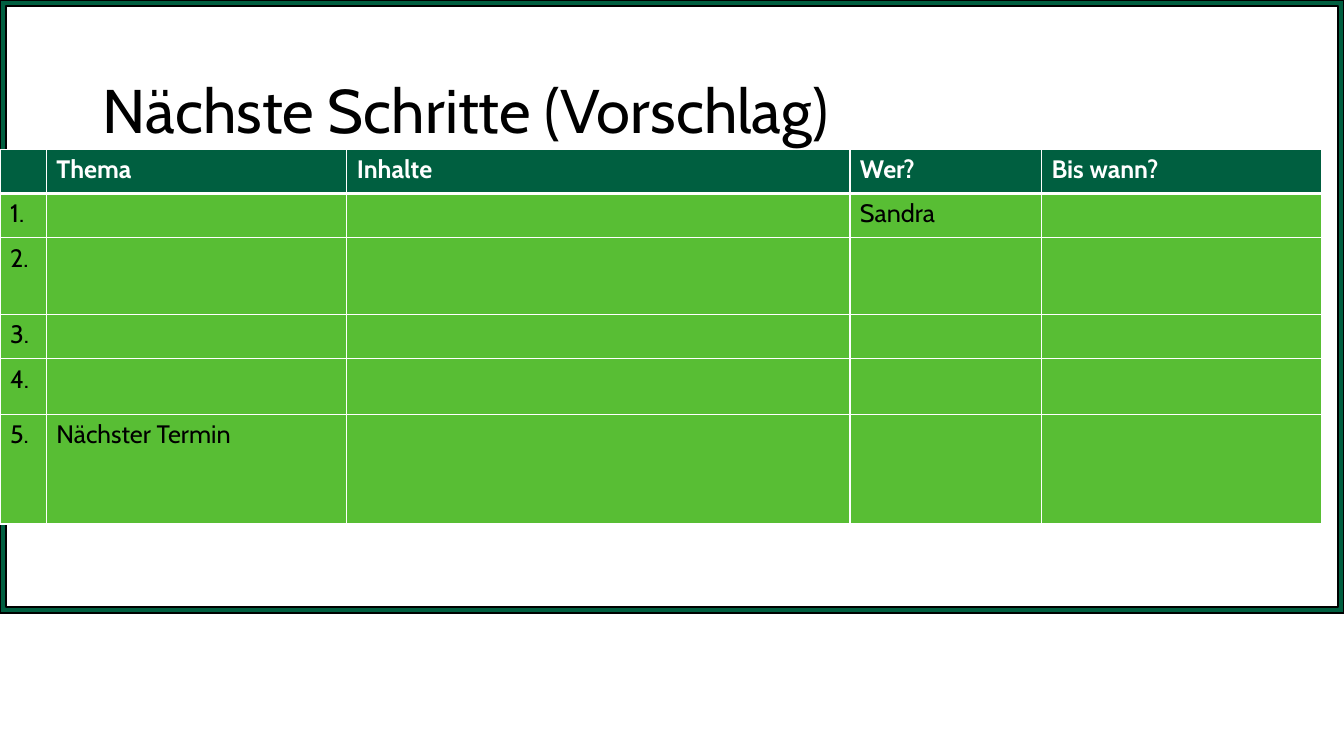
import pptx
import pptx.dml.color
import pptx.enum.shapes
import pptx.enum.text
import pptx.oxml
import pptx.oxml.ns
import pptx.util
from pptx.util import Inches

FONT = "Cabin"
DARK, GREEN, WHITE, BLACK = "005F40", "58BE34", "FFFFFF", "000000"


def color(code):
    return pptx.dml.color.RGBColor.from_string(code)


class Deck:
    """Holds the style and the current slide."""

    def __init__(self, wide, high):
        self.file = pptx.Presentation()
        self.file.slide_width = Inches(wide)
        self.file.slide_height = Inches(high)
        self.slide = self.file.slides.add_slide(self.file.slide_layouts[5])

    def style(self, para, size, code, bold=False):
        font = para.font
        font.name, font.size, font.bold = FONT, pptx.util.Pt(size), bold
        font.color.rgb = color(code)

    def frame(self, box, adjust):
        kind = pptx.enum.shapes.MSO_SHAPE.FRAME
        shape = self.slide.shapes.add_shape(kind, *map(Inches, box))
        shape.adjustments[0] = adjust
        shape.shadow.inherit = False
        shape.fill.solid()
        shape.fill.fore_color.rgb = color(DARK)
        shape.line.color.rgb = color(BLACK)
        shape.line.width = pptx.util.Pt(1.5)
        # Send behind the title
        self.slide.shapes._spTree.insert(2, shape._element)

    def title(self, box, text):
        shape = self.slide.shapes.title
        shape.left, shape.top, shape.width, shape.height = map(Inches, box)
        frame = shape.text_frame
        frame.text = text
        frame.word_wrap = True
        frame.vertical_anchor = pptx.enum.text.MSO_ANCHOR.MIDDLE
        para = frame.paragraphs[0]
        para.alignment = pptx.enum.text.PP_ALIGN.LEFT
        para.line_spacing = 0.9
        self.style(para, 44, BLACK)

    def border(self, cell, side, points):
        line = pptx.oxml.parse_xml(
            f'<a:ln{side} {pptx.oxml.ns.nsdecls("a")} w="{pptx.util.Pt(points)}">'
            f'<a:solidFill><a:srgbClr val="{WHITE}"/></a:solidFill></a:ln{side}>')
        cell._tc.get_or_add_tcPr().append(line)

    def cell(self, cell, text, row):
        head = row == 0
        widths = {"L": 1, "R": 1, "T": 3 if row == 1 else 1, "B": 3 if head else 1}
        for side, points in widths.items():
            self.border(cell, side, points)
        cell.fill.solid()
        cell.fill.fore_color.rgb = color(DARK if head else GREEN)
        cell.text = text
        self.style(cell.text_frame.paragraphs[0], 18, WHITE if head else BLACK, head)

    def table(self, left, top, cols, rows, data):
        box = map(Inches, (left, top, sum(cols), sum(rows)))
        table = self.slide.shapes.add_table(len(rows), len(cols), *box).table
        for col, width in zip(table.columns, cols):
            col.width = Inches(width)
        for row, height in zip(table.rows, rows):
            row.height = Inches(height)
        for r, line in enumerate(data):
            for c, text in enumerate(line):
                self.cell(table.cell(r, c), text, r)


def main():
    deck = Deck(13.33, 7.5)

    # Frame and title
    deck.frame((0, 0, 13.33, 6.08), 0.01)
    deck.title((0.92, 0.4, 11.5, 1.45), "Nächste Schritte (Vorschlag)")

    # Table of next steps
    steps = [
        ("", "Thema", "Inhalte", "Wer?", "Bis wann?"),
        ("1.", "", "", "Sandra", ""),
        ("2.", "", "", "", ""),
        ("3.", "", "", "", ""),
        ("4.", "", "", "", ""),
        ("5.", "Nächster Termin", "", "", ""),
    ]
    cols = (0.46, 2.98, 4.99, 1.9, 2.78)
    rows = (0.44, 0.44, 0.76, 0.44, 0.55, 1.09)
    deck.table(0, 1.48, cols, rows, steps)

    deck.file.save("out.pptx")


if __name__ == "__main__":
    main()
